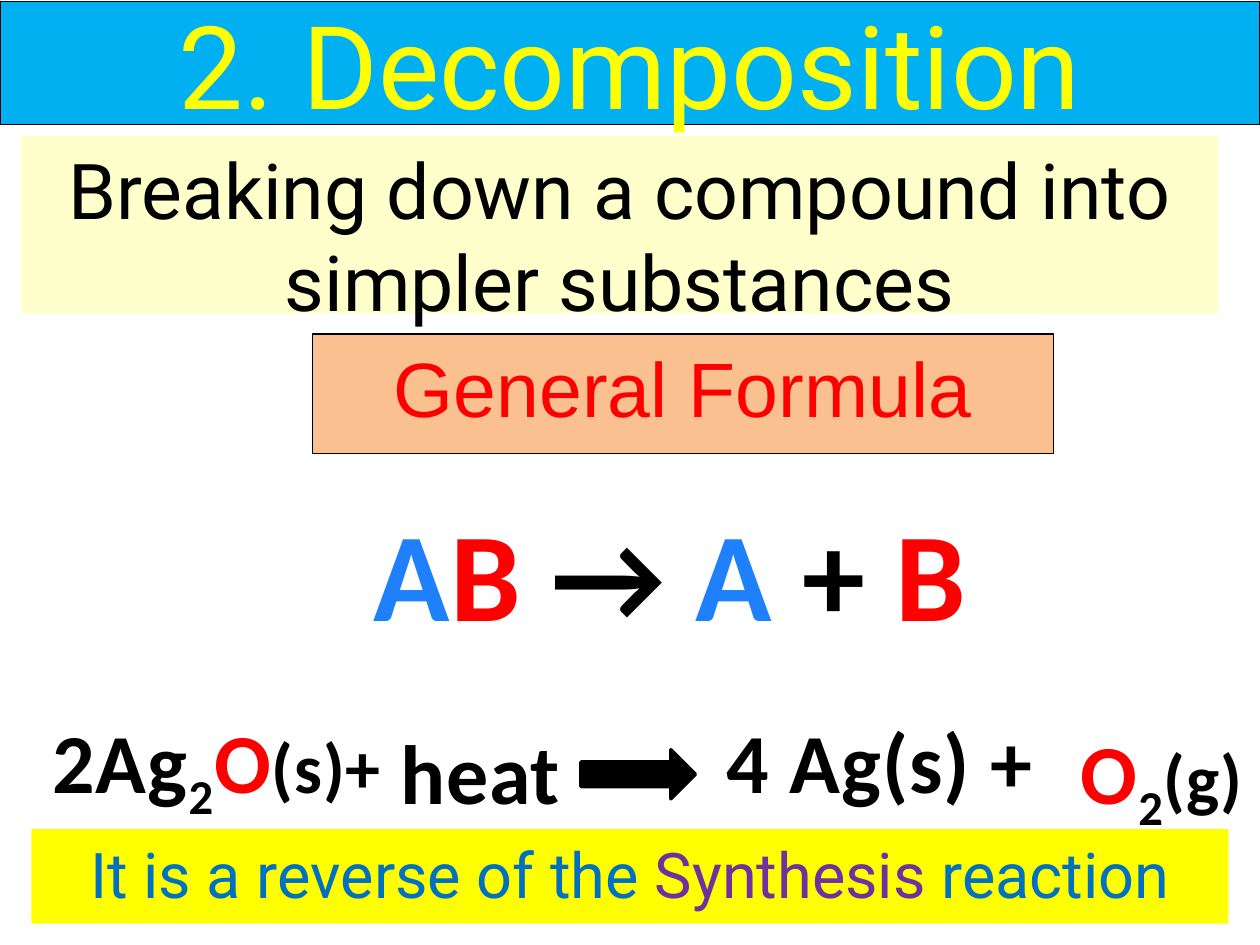
from dataclasses import dataclass
from typing import Optional

from pptx import Presentation
from pptx.dml.color import RGBColor
from pptx.enum.shapes import MSO_SHAPE as Preset
from pptx.enum.text import MSO_ANCHOR as Anchor, MSO_AUTO_SIZE as AutoSize, PP_ALIGN as Align
from pptx.util import Pt

COLORS = {
    "black": "000000",
    "red": "FF0000",
    "yellow": "FFFF00",
    "cyan": "00B0F0",
    "cream": "FFFFCC",
    "peach": "FAC090",
    "blue": "0070C0",
    "purple": "7030A0",
    "gradient_start": "1E80FA",
    "gradient_end": "105AB6",
}


@dataclass
class Piece:
    text: str
    size: float
    color: str = "black"
    subscript: bool = False


@dataclass
class Box:
    left: float
    top: float
    width: float
    height: float


@dataclass
class Banner:
    box: Box
    fill: str
    font: str
    pieces: list[Piece]
    line: Optional[str] = None


@dataclass
class Formula:
    box: Box
    pieces: list[Piece]
    align: Align = Align.CENTER


BANNERS = [
    Banner(Box(12.24, 77.76, 684, 101.52), "cream", "Roboto",
           [Piece("Breaking down a compound into simpler substances", 44)]),
    Banner(Box(178.56, 190.8, 423.36, 68.4), "peach", "Arial",
           [Piece("General Formula", 44, "red")], "black"),
    Banner(Box(18, 473.76, 684, 54), "yellow", "Roboto",
           [Piece("It is a reverse of the ", 36, "blue"),
            Piece("Synthesis", 36, "purple"),
            Piece(" reaction", 36, "blue")]),
]

FORMULAS = [
    Formula(Box(165.6, 279.36, 434.16, 94.32),
            [Piece("A", 72, "gradient"), Piece("B ", 72, "red"), Piece("→", 72),
             Piece(" A ", 72, "gradient"), Piece("+ ", 72), Piece("B", 72, "red")]),
    Formula(Box(408.24, 401.76, 222.48, 65.52), [Piece("4 Ag(s) +", 48)], Align.LEFT),
    Formula(Box(581.76, 408.24, 164.16, 65.52),
            [Piece("O", 48, "red"), Piece("2", 48, subscript=True), Piece("(g)", 40)]),
    Formula(Box(0, 401.76, 247.68, 65.52),
            [Piece("2Ag", 48), Piece("2", 48, subscript=True),
             Piece("O", 48, "red"), Piece("(s)+", 40)]),
    Formula(Box(192.24, 408.24, 164.16, 65.52), [Piece("heat", 48)]),
]


def rgb(name: str) -> RGBColor:
    return RGBColor.from_string(COLORS[name])


def place(box: Box) -> tuple:
    return Pt(box.left), Pt(box.top), Pt(box.width), Pt(box.height)


def paint(shape, fill: str, line: Optional[str], width: float = 0.75) -> None:
    shape.fill.solid()
    shape.fill.fore_color.rgb = rgb(fill)
    if line:
        shape.line.color.rgb = rgb(line)
        shape.line.width = Pt(width)
    else:
        shape.line.fill.background()


def color_font(font, color: str) -> None:
    if color != "gradient":
        font.color.rgb = rgb(color)
        return
    font.fill.gradient()
    font.fill.gradient_angle = 270
    first, last = font.fill.gradient_stops
    first.position, last.position = 0.25, 1
    first.color.rgb = rgb("gradient_start")
    last.color.rgb = rgb("gradient_end")


def write(paragraph, pieces: list[Piece], font_name: str,
          align: Align = Align.CENTER, formula: bool = False) -> None:
    paragraph.alignment = align
    for piece in pieces:
        run = paragraph.add_run()
        run.text = piece.text
        run.font.name = font_name
        run.font.size = Pt(piece.size)
        run.font.bold = formula
        color_font(run.font, piece.color)
        properties = run.font._element
        if formula:
            properties.set("spc", "50")
        if piece.subscript:
            properties.set("baseline", "-25000")


def add_title(slide) -> None:
    title = slide.shapes.title
    title.left, title.top, title.width, title.height = place(Box(0, 0.72, 720, 70.56))
    paint(title, "cyan", "black")
    frame = title.text_frame
    frame.auto_size = AutoSize.NONE
    frame.vertical_anchor = Anchor.MIDDLE
    write(frame.paragraphs[0], [Piece("2. Decomposition", 66, "yellow")], "Roboto")


def add_banner(slide, banner: Banner) -> None:
    shape = slide.shapes.add_shape(Preset.RECTANGLE, *place(banner.box))
    shape.shadow.inherit = False
    paint(shape, banner.fill, banner.line)
    frame = shape.text_frame
    frame.word_wrap = True
    frame.vertical_anchor = Anchor.TOP
    frame.margin_left = frame.margin_right = frame.margin_bottom = 0
    frame.margin_top = Pt(3.6)
    write(frame.paragraphs[0], banner.pieces, banner.font)


def add_formula(slide, formula: Formula) -> None:
    frame = slide.shapes.add_textbox(*place(formula.box)).text_frame
    frame.word_wrap = True
    frame.auto_size = AutoSize.SHAPE_TO_FIT_TEXT
    write(frame.paragraphs[0], formula.pieces, "Calibri", formula.align, formula=True)


def add_reaction_arrow(slide) -> None:
    arrow = slide.shapes.add_shape(Preset.RIGHT_ARROW, *place(Box(331.92, 428.4, 65.52, 28.08)))
    arrow.shadow.inherit = False
    paint(arrow, "black", "black", 2)


def main() -> None:
    presentation = Presentation()
    presentation.slide_width, presentation.slide_height = Pt(720), Pt(540)
    slide = presentation.slides.add_slide(presentation.slide_layouts[5])
    add_title(slide)
    for banner in BANNERS:
        add_banner(slide, banner)
    for formula in FORMULAS:
        add_formula(slide, formula)
    add_reaction_arrow(slide)
    presentation.save("out.pptx")


if __name__ == "__main__":
    main()
